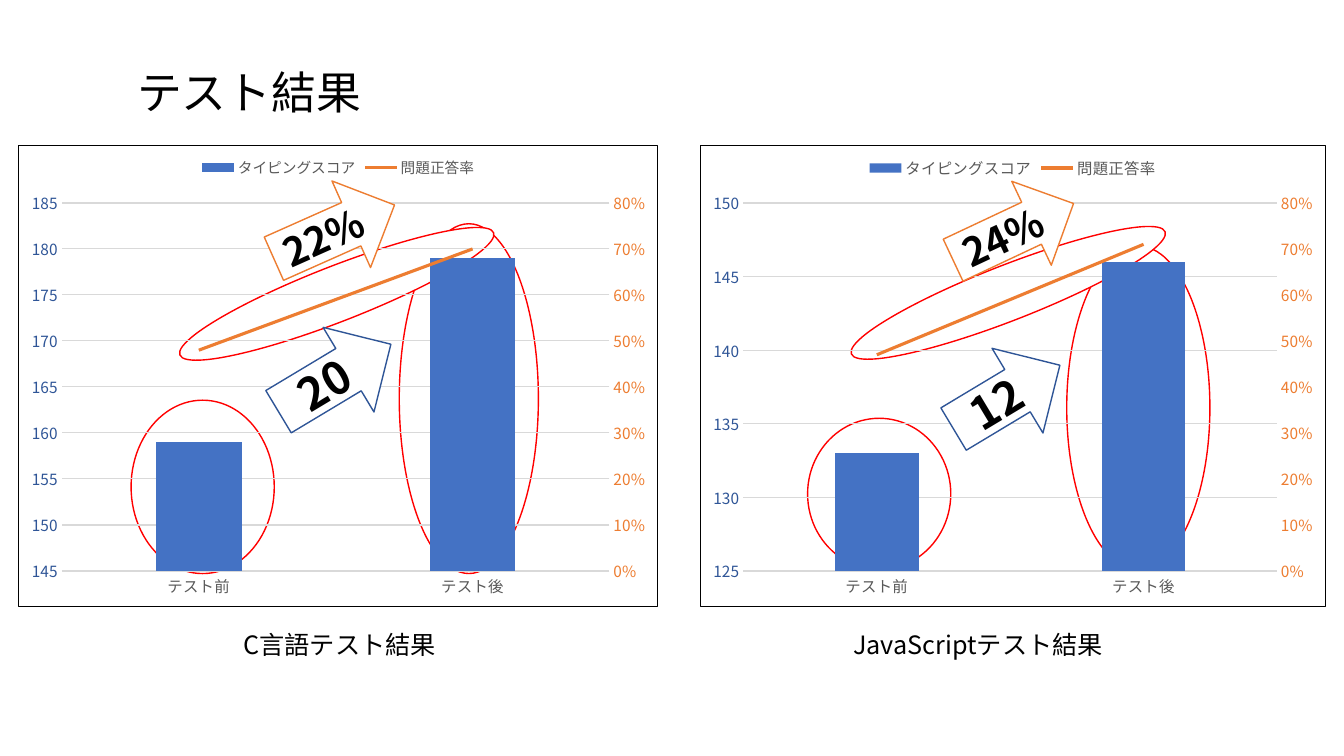
from dataclasses import dataclass

from lxml.etree import SubElement
from pptx import Presentation
from pptx.chart.data import CategoryChartData
from pptx.dml.color import RGBColor
from pptx.enum.chart import XL_CHART_TYPE as Kind
from pptx.enum.chart import XL_LEGEND_POSITION as Spot
from pptx.enum.chart import XL_TICK_MARK as Tick
from pptx.enum.shapes import MSO_SHAPE as Form
from pptx.enum.text import MSO_ANCHOR as Anchor
from pptx.enum.text import MSO_AUTO_SIZE as Fit
from pptx.enum.text import PP_ALIGN as Align
from pptx.oxml import parse_xml
from pptx.oxml.ns import nsdecls, qn
from pptx.util import Inches, Pt


@dataclass(frozen=True)
class Theme:
    face: str = "Noto Sans CJK JP"
    black: str = "000000"
    white: str = "FFFFFF"
    red: str = "FF0000"
    blue: str = "4472C4"
    navy: str = "2F5597"
    orange: str = "ED7D31"
    gray: str = "595959"
    rule: str = "D9D9D9"
    title: float = 32
    score: float = 32
    rate: float = 28
    label: float = 18
    axis: float = 11


T = Theme()
rgb = RGBColor.from_string


def style(font, size, color, bold=False):
    font.name, font.size, font.bold = T.face, Pt(size), bold
    font.color.rgb = rgb(color)


def place(shape, box, text="", size=T.label, bold=False, align=Align.CENTER):
    """Set the frame of a shape and write its one line of text."""
    shape.left, shape.top, shape.width, shape.height = map(Inches, box)
    frame = shape.text_frame
    frame.word_wrap, frame.auto_size = True, Fit.NONE
    frame.vertical_anchor = Anchor.MIDDLE
    if text:
        para = frame.paragraphs[0]
        para.alignment = align
        run = para.add_run()
        run.text = text
        style(run.font, size, T.black, bold)


# box, left scale, values, legend size, caption left, ellipses and arrows
panels = [
    dict(box=(0.18, 1.44, 6.35, 4.58), low=145, high=185,
         scores=(159, 179), rates=(0.48, 0.70), key=10.5,
         label="C言語テスト結果", left=1.79,
         rings=[(3.96, 2.22, 1.38, 3.47, 0), (1.30, 3.97, 1.42, 1.72, 0),
                (1.67, 2.64, 3.34, 0.55, 338.7)],
         arrows=[(2.67, 3.26, 1.30, 0.98, 329, "20", T.score, T.navy),
                 (2.66, 1.83, 1.31, 0.94, 336, "22%", T.rate, T.orange)]),
    dict(box=(6.94, 1.44, 6.21, 4.58), low=125, high=150,
         scores=(133, 146), rates=(0.47, 0.71), key=11,
         label="JavaScriptテスト結果", left=8.12,
         rings=[(8.01, 4.15, 1.42, 1.50, 0), (10.58, 2.44, 1.42, 3.21, 0),
                (8.33, 2.63, 3.34, 0.55, 338.7)],
         arrows=[(9.37, 3.45, 1.23, 0.98, 329, "12", T.score, T.navy),
                 (9.39, 1.84, 1.32, 0.92, 334.8, "24%", T.rate, T.orange)]),
]

deck = Presentation()
deck.slide_width, deck.slide_height = Inches(13.33), Inches(7.5)
slide = deck.slides.add_slide(deck.slide_layouts[5])
shapes = slide.shapes
place(shapes.title, (1.26, 0.59, 10.6, 0.64), "テスト結果", T.title,
      align=Align.LEFT)
roots = [slide.element]

for panel in panels:
    marks = [(Form.OVAL, *ring, "", T.label, T.red) for ring in panel["rings"]]
    marks += [(Form.RIGHT_ARROW, *arrow) for arrow in panel["arrows"]]
    arrows = []
    for form, *box, turn, text, size, color in marks:
        mark = shapes.add_shape(form, *map(Inches, box))
        place(mark, box, text, size, bold=True)
        mark.rotation = turn
        mark.shadow.inherit = False
        mark.fill.solid()
        mark.fill.fore_color.rgb = rgb(T.white)
        mark.line.color.rgb = rgb(color)
        mark.line.width = Pt(1)
        if text:
            arrows.append(mark)

    data = CategoryChartData()
    data.categories = ["テスト前", "テスト後"]
    data.add_series("タイピングスコア", panel["scores"], "0")
    data.add_series("問題正答率", panel["rates"], "0%")
    holder = shapes.add_chart(Kind.COLUMN_CLUSTERED,
                              *map(Inches, panel["box"]), data)
    for arrow in arrows:  # arrows lie over the chart, ellipses under it
        shapes.element.append(arrow.element)
    chart = holder.chart
    root = chart.element
    roots.append(root)
    chart.has_title = False
    style(chart.font, panel["key"], T.black)
    chart.has_legend = True
    chart.legend.position = Spot.TOP
    chart.legend.include_in_layout = False
    style(chart.legend.font, panel["key"], T.gray)

    cats, vals = chart.category_axis, chart.value_axis
    for axis, color in ((cats, T.gray), (vals, T.navy)):
        axis.major_tick_mark = axis.minor_tick_mark = Tick.NONE
        style(axis.tick_labels.font, T.axis, color)
    vals.minimum_scale, vals.maximum_scale = panel["low"], panel["high"]
    vals.major_unit = 5
    vals.tick_labels.number_format = "0"
    vals.tick_labels.number_format_is_linked = False
    vals.format.line.fill.background()
    for line in (cats.format.line, vals.major_gridlines.format.line):
        line.color.rgb = rgb(T.rule)
        line.width = Pt(0.75)

    plot = chart.plots[0]
    plot.gap_width, plot.overlap = 219, -27
    plot.vary_by_categories = False
    bars, trend = plot.series
    bars.format.fill.solid()
    bars.format.fill.fore_color.rgb = rgb(T.blue)
    trend.format.line.color.rgb = rgb(T.orange)
    trend.format.line.width = Pt(2.25)

    # Move the rate series to a line plot on a second axis
    ser = trend._element
    for flag in ser.findall(qn("c:invertIfNegative")):
        ser.remove(flag)
    ser.find(qn("c:spPr")).addnext(parse_xml(
        f'<c:marker {nsdecls("c")}><c:symbol val="none"/></c:marker>'))
    SubElement(ser, qn("c:smooth")).set("val", "0")
    lines = parse_xml(
        f'<c:lineChart {nsdecls("c")}><c:grouping val="standard"/>'
        '<c:varyColors val="0"/><c:marker val="1"/>'
        '<c:axId val="301"/><c:axId val="302"/></c:lineChart>')
    lines.insert(2, ser)
    area = root.find(".//" + qn("c:plotArea"))
    area.find(qn("c:barChart")).addnext(lines)
    right = parse_xml(
        f'<c:valAx {nsdecls("c", "a")}><c:axId val="302"/><c:scaling>'
        '<c:orientation val="minMax"/><c:max val="0.8"/><c:min val="0"/>'
        '</c:scaling><c:delete val="0"/><c:axPos val="r"/>'
        '<c:numFmt formatCode="0%" sourceLinked="0"/>'
        '<c:majorTickMark val="none"/><c:minorTickMark val="none"/>'
        '<c:tickLblPos val="nextTo"/>'
        '<c:spPr><a:ln><a:noFill/></a:ln></c:spPr>'
        '<c:txPr><a:bodyPr/><a:p><a:pPr>'
        f'<a:defRPr sz="{T.axis * 100}" b="0"><a:solidFill>'
        f'<a:srgbClr val="{T.orange}"/></a:solidFill>'
        f'<a:latin typeface="{T.face}"/></a:defRPr></a:pPr>'
        '<a:endParaRPr lang="ja-JP"/></a:p></c:txPr>'
        '<c:crossAx val="301"/><c:crosses val="max"/>'
        '<c:majorUnit val="0.1"/></c:valAx>')
    hidden = parse_xml(
        f'<c:catAx {nsdecls("c")}><c:axId val="301"/><c:scaling>'
        '<c:orientation val="minMax"/></c:scaling><c:delete val="1"/>'
        '<c:axPos val="b"/><c:crossAx val="302"/></c:catAx>')
    area.findall(qn("c:valAx"))[-1].addnext(right)
    right.addnext(hidden)

    # Same margins around both plots, then the outer border
    wide, high = panel["box"][2:]
    inner = dict(x=0.43 / wide, y=0.57 / high,
                 w=(wide - 0.91) / wide, h=3.66 / high)
    for old in area.findall(qn("c:layout")):
        area.remove(old)
    area.insert(0, parse_xml(
        f'<c:layout {nsdecls("c")}><c:manualLayout>'
        '<c:layoutTarget val="inner"/><c:xMode val="edge"/>'
        '<c:yMode val="edge"/>'
        + "".join(f'<c:{k} val="{v:.4f}"/>' for k, v in inner.items())
        + '</c:manualLayout></c:layout>'))
    root.find(qn("c:chart")).addnext(parse_xml(
        f'<c:spPr {nsdecls("c", "a")}><a:noFill/><a:ln w="{Pt(0.75)}">'
        f'<a:solidFill><a:srgbClr val="{T.black}"/></a:solidFill>'
        '</a:ln></c:spPr>'))

    box = (panel["left"], 6.19, 3.16, 0.4)
    place(shapes.add_textbox(*map(Inches, box)), box, panel["label"])

# Japanese glyphs take their face from a:ea
for root in roots:
    for latin in list(root.iter(qn("a:latin"))):
        latin.addnext(parse_xml(
            f'<a:ea {nsdecls("a")} typeface="{T.face}"/>'))

deck.save("out.pptx")
